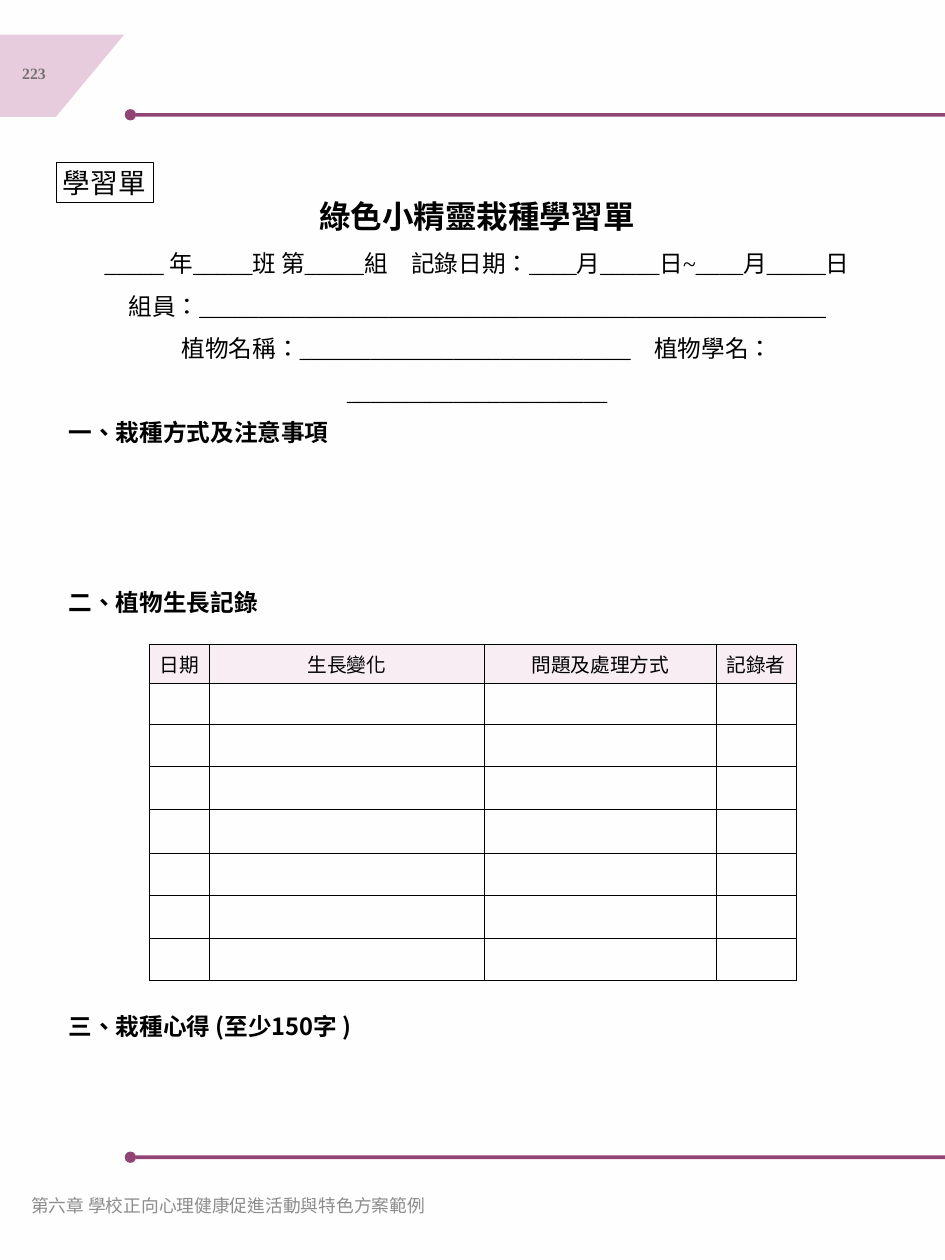
from lxml import etree
from pptx import Presentation, util as u
from pptx.dml.color import RGBColor
from pptx.enum import shapes, text
from pptx.oxml import ns

SERIF = "Times New Roman"
SANS = "Noto Sans CJK SC"
PLUM, PINK, PALE = "924474", "E7CCDD", "F7EDF3"
BLACK, GRAY, SILVER = "000000", "767171", "8C8C8C"
CENTER = text.PP_ALIGN.CENTER


def color(value):
    return RGBColor.from_string(value)


def box(left, top, width, height):
    return [u.Inches(value) for value in (left, top, width, height)]


def add_run(paragraph, words, size, ink=BLACK, bold=False, font=SERIF):
    run = paragraph.add_run()
    run.text = words
    run.font.size = u.Pt(size)
    run.font.bold = bold
    run.font.name = font
    run.font.color.rgb = color(ink)
    properties = run.font._element
    properties.set("lang", "zh-TW")
    etree.SubElement(properties, ns.qn("a:ea")).set("typeface", SANS)


def add_text(slide, area, words, size, align=None, **style):
    frame = slide.shapes.add_textbox(*box(*area)).text_frame
    frame.word_wrap = True
    frame.vertical_anchor = text.MSO_ANCHOR.MIDDLE
    paragraph = frame.paragraphs[0]
    paragraph.alignment = align
    add_run(paragraph, words, size, **style)


def paint(shape, fill):
    shape.shadow.inherit = False
    shape.fill.solid()
    shape.fill.fore_color.rgb = color(fill)
    shape.line.fill.background()


def add_rule(slide, left, top, right):
    dot, bar = 0.16, 0.05
    start = left + dot
    line = slide.shapes.add_shape(
        shapes.MSO_SHAPE.RECTANGLE,
        *box(start, top + (dot - bar) / 2, right - start, bar))
    paint(line, PLUM)
    paint(slide.shapes.add_shape(shapes.MSO_SHAPE.OVAL, *box(left, top, dot, dot)), PLUM)


def add_page_tab(slide, left, top, width, height):
    builder = slide.shapes.build_freeform(
        u.Inches(left), u.Inches(top), scale=1.0)
    corners = [(width, 0), (0.45 * width, height), (0, height)]
    builder.add_line_segments(
        [(u.Inches(left + x), u.Inches(top + y)) for x, y in corners], close=True)
    paint(builder.convert_to_shape(), PINK)
    add_text(slide, (left + 0.09, top + 0.15, 0.78, 0.8), "223", 16, CENTER,
             ink=GRAY, bold=True)


def add_label(slide, left, top, width, height):
    label = slide.shapes.add_shape(
        shapes.MSO_SHAPE.RECTANGLE, *box(left, top, width, height))
    label.shadow.inherit = False
    label.fill.background()
    label.line.color.rgb = color(BLACK)
    label.line.width = u.Pt(0.75)
    frame = label.text_frame
    frame.word_wrap = False
    frame.vertical_anchor = text.MSO_ANCHOR.MIDDLE
    frame.paragraphs[0].alignment = text.PP_ALIGN.LEFT
    add_run(frame.paragraphs[0], "學習單", 28)


def add_form(slide, left, top, width, height):
    frame = slide.shapes.add_textbox(*box(left, top, width, height)).text_frame
    frame.word_wrap = True
    title = frame.paragraphs[0]
    title.alignment = CENTER
    title.line_spacing = u.Pt(60)
    add_run(title, "綠色小精靈栽種學習單", 32, bold=True)
    blank = "_" * 5
    lines = [
        [f"{blank} 年{blank}班 第{blank}組　記錄日期：____月{blank}日~____月{blank}日"],
        ["組員：" + "_" * 53],
        ["植物名稱：" + "_" * 28 + "　植物學名：", "_" * 22],
    ]
    for parts in lines:
        paragraph = frame.add_paragraph()
        paragraph.alignment = CENTER
        paragraph.line_spacing = u.Pt(43.2)
        for index, words in enumerate(parts):
            if index:
                paragraph.add_line_break()
            add_run(paragraph, words, 24)


def add_headings(slide, left, width):
    headings = [(5.79, "一、栽種方式及注意事項"),
                (8.19, "二、植物生長記錄"),
                (14.18, "三、栽種心得 (至少150字 )")]
    for top, words in headings:
        add_text(slide, (left, top, width, 0.6), words, 24, bold=True, font=SANS)


def add_borders(cell):
    properties = cell._tc.get_or_add_tcPr()
    for index, side in enumerate(("lnL", "lnR", "lnT", "lnB")):
        line = etree.Element(ns.qn(f"a:{side}"), w=str(u.Pt(1)))
        fill = etree.SubElement(line, ns.qn("a:solidFill"))
        etree.SubElement(fill, ns.qn("a:srgbClr"), val=BLACK)
        properties.insert(index, line)


def add_growth_table(slide, left, top):
    widths = [0.84, 3.89, 3.26, 1.13]
    heights = [0.56, 0.57, 0.6, 0.6, 0.62, 0.6, 0.6, 0.6]
    titles = ["日期", "生長變化", "問題及處理方式", "記錄者"]
    table = slide.shapes.add_table(
        len(heights), len(widths),
        *box(left, top, sum(widths), sum(heights))).table
    for column, width in zip(table.columns, widths):
        column.width = u.Inches(width)
    for row, height in zip(table.rows, heights):
        row.height = u.Inches(height)
    for cell in table.iter_cells():
        cell.fill.background()
        add_borders(cell)
    for cell, words in zip(table.rows[0].cells, titles):
        cell.fill.solid()
        cell.fill.fore_color.rgb = color(PALE)
        cell.margin_left = cell.margin_right = u.Inches(0.07)
        cell.margin_top = cell.margin_bottom = 0
        cell.vertical_anchor = text.MSO_ANCHOR.MIDDLE
        paragraph = cell.text_frame.paragraphs[0]
        paragraph.alignment = CENTER
        add_run(paragraph, words, 20)


def main():
    presentation = Presentation()
    presentation.slide_width = u.Inches(13.33)
    presentation.slide_height = u.Inches(17.78)
    slide = presentation.slides.add_slide(presentation.slide_layouts[6])
    slide.background.fill.solid()
    slide.background.fill.fore_color.rgb = color("FEFEFE")
    for top in (1.54, 16.25):
        add_rule(slide, 1.76, top, 13.33)
    add_page_tab(slide, 0, 0.49, 1.75, 1.16)
    add_headings(slide, 0.87, 10.38)
    add_form(slide, 0.53, 2.43, 12.4, 3.3)
    add_label(slide, 0.79, 2.29, 1.38, 0.57)
    add_growth_table(slide, 2.11, 9.09)
    add_text(slide, (0.34, 16.61, 6.2, 0.8),
             "第六章 學校正向心理健康促進活動與特色方案範例", 18, ink=SILVER)
    presentation.save("out.pptx")


if __name__ == "__main__":
    main()
